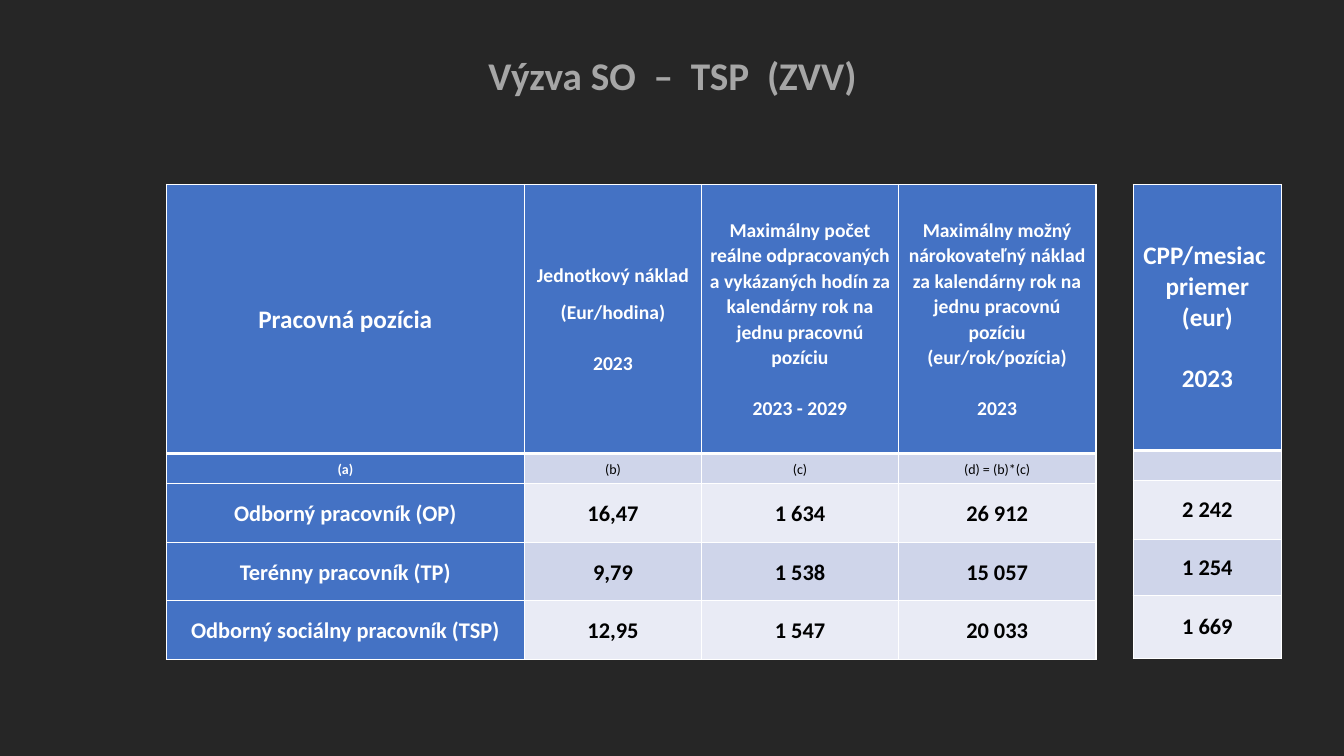
from lxml import etree
from pptx import Presentation
from pptx.dml.color import RGBColor
from pptx.enum.text import MSO_ANCHOR, PP_ALIGN
from pptx.oxml.ns import qn
from pptx.util import Inches, Pt

LEFT, CENTER = PP_ALIGN.LEFT, PP_ALIGN.CENTER
MIDDLE = MSO_ANCHOR.MIDDLE
FONT = "Calibri"
COLORS = {
    "background": "262626",
    "title": "A6A6A6",
    "header": "4472C4",
    "dark band": "CFD5EA",
    "light band": "E9EBF5",
    "white": "FFFFFF",
    "black": "000000",
}
TITLE = "Výzva SO  –  TSP  (ZVV)"

# Each header cell is a list of (line, space before in points).
COST_TABLE = {
    "box": (1.65, 1.83, 9.22, 4.71),
    "columns": [3.55, 1.76, 1.95, 1.96],
    "rows": [2.67, 0.3, 0.58, 0.58, 0.58],
    "margins": (0.05, 0),
    "line_spacing": 1.07,
    "label_columns": 1,
    "header_sizes": [18, 14, 14, 14],
    "header": [
        [("Pracovná pozícia", 0)],
        [("Jednotkový náklad", 0), ("(Eur/hodina)", 8), ("2023", 18.3)],
        [("Maximálny počet reálne odpracovaných a vykázaných hodín za "
          "kalendárny rok na jednu pracovnú pozíciu", 0), ("2023 - 2029", 18.3)],
        [("Maximálny možný nárokovateľný náklad za kalendárny rok na jednu "
          "pracovnú pozíciu (eur/rok/pozícia)", 0), ("2023", 18.3)],
    ],
    "header_first_align": CENTER,
    "body": [
        ["(a)", "(b)", "(c)", "(d) = (b)*(c)"],
        ["Odborný pracovník (OP)", "16,47", "1 634", "26 912"],
        ["Terénny pracovník (TP)", "9,79", "1 538", "15 057"],
        ["Odborný sociálny pracovník (TSP)", "12,95", "1 547", "20 033"],
    ],
}
MONTHLY_TABLE = {
    "box": (11.24, 1.83, 1.47, 4.71),
    "columns": [1.47],
    "rows": [2.64, 0.3, 0.58, 0.56, 0.62],
    "margins": (0.1, 0.05),
    "line_spacing": 1.0,
    "label_columns": 0,
    "header_sizes": [18],
    "header": [[("CPP/mesiac", 0), ("priemer", 0), ("(eur)", 0), ("2023", 22)]],
    "header_first_align": LEFT,
    "body": [[""], ["2 242"], ["1 254"], ["1 669"]],
}


def color(name):
    """Return the named colour."""
    return RGBColor.from_string(COLORS[name])


def write_text(frame, lines, *, size, fill, bold=True, spacing=1.0, first_align=CENTER):
    """Write (text, space before) lines into a text frame."""
    frame.word_wrap = True
    for index, (text, gap) in enumerate(lines):
        paragraph = frame.add_paragraph() if index else frame.paragraphs[0]
        paragraph.alignment = CENTER if index else first_align
        paragraph.line_spacing = spacing
        paragraph.space_before = Pt(gap)
        if not text:
            etree.SubElement(paragraph._p, qn("a:endParaRPr"), sz=str(size * 100))
            continue
        run = paragraph.add_run()
        run.text = text
        run.font.name = FONT
        run.font.size = Pt(size)
        run.font.bold = bold
        run.font.color.rgb = color(fill)


def set_borders(cell, top, bottom):
    """Draw white borders with the given top and bottom widths in points."""
    properties = cell._tc.get_or_add_tcPr()
    widths = {"lnL": 1, "lnR": 1, "lnT": top, "lnB": bottom}
    for index, (side, width) in enumerate(widths.items()):
        line = etree.Element(qn(f"a:{side}"), w=str(Pt(width)))
        solid = etree.SubElement(line, qn("a:solidFill"))
        etree.SubElement(solid, qn("a:srgbClr"), val=COLORS["white"])
        properties.insert(index, line)


def add_cost_table(slide, content):
    """Add one table with a blue header and banded body rows."""
    rows, columns = content["rows"], content["columns"]
    box = [Inches(value) for value in content["box"]]
    table = slide.shapes.add_table(len(rows), len(columns), *box).table
    table.first_row = table.horz_banding = False
    for row, height in zip(table.rows, rows):
        row.height = Inches(height)
    for column, width in zip(table.columns, columns):
        column.width = Inches(width)
    side, edge = (Inches(value) for value in content["margins"])
    body = [[[(text, 0)] for text in line] for line in content["body"]]
    for row_index, line in enumerate([content["header"]] + body):
        for column_index, lines in enumerate(line):
            cell = table.cell(row_index, column_index)
            is_header = row_index == 0
            is_label = is_header or column_index < content["label_columns"]
            band = "dark band" if row_index % 2 else "light band"
            cell.fill.solid()
            cell.fill.fore_color.rgb = color("header" if is_label else band)
            cell.vertical_anchor = MIDDLE
            cell.margin_left = cell.margin_right = side
            cell.margin_top = cell.margin_bottom = edge
            set_borders(cell, 3 if row_index == 1 else 1, 3 if is_header else 1)
            body_size = 10 if row_index == 1 else 16
            write_text(
                cell.text_frame, lines,
                size=content["header_sizes"][column_index] if is_header else body_size,
                fill="white" if is_label else "black",
                bold=is_label or row_index > 1,
                spacing=content["line_spacing"],
                first_align=content["header_first_align"] if is_header else CENTER,
            )


def main():
    """Build the slide and save it."""
    presentation = Presentation()
    presentation.slide_width = Inches(13.33)
    presentation.slide_height = Inches(7.5)
    slide = presentation.slides.add_slide(presentation.slide_layouts[6])
    slide.background.fill.solid()
    slide.background.fill.fore_color.rgb = color("background")
    title = slide.shapes.add_textbox(Inches(0.92), Inches(0.22), Inches(11.5), Inches(1.1))
    title.text_frame.vertical_anchor = MIDDLE
    write_text(title.text_frame, [(TITLE, 0)], size=28, fill="title", spacing=0.9)
    for content in (COST_TABLE, MONTHLY_TABLE):
        add_cost_table(slide, content)
    presentation.save("out.pptx")


if __name__ == "__main__":
    main()
